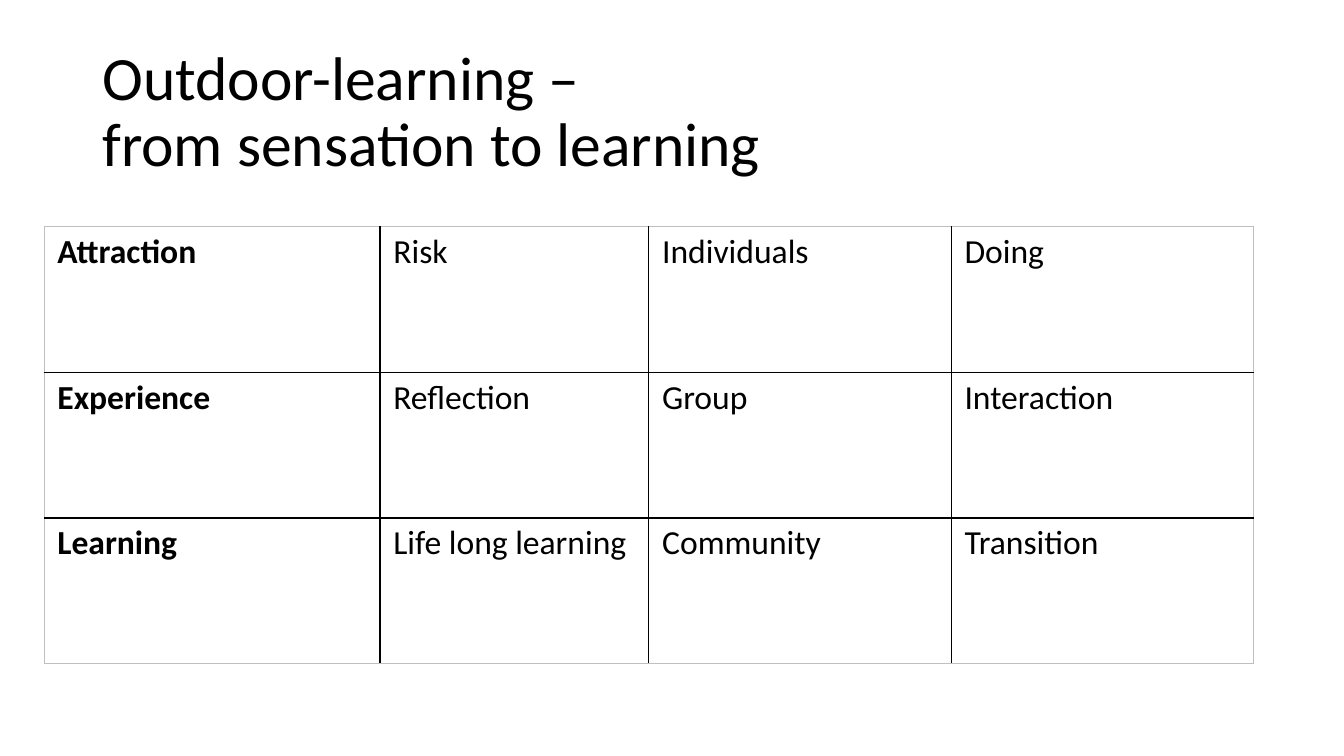
"""Build the outdoor-learning slide with its table of learning stages."""
from dataclasses import dataclass

from lxml import etree
from pptx import Presentation
from pptx.dml.color import RGBColor
from pptx.enum.text import MSO_ANCHOR
from pptx.oxml.ns import qn
from pptx.util import Emu, Pt

EMU_PER_PX = 6350
SLIDE_WIDTH, SLIDE_HEIGHT = 1920, 1080
FONT = "Calibri"
BLACK = RGBColor(0x00, 0x00, 0x00)
GREY = RGBColor(0xBF, 0xBF, 0xBF)
MIDDLE = MSO_ANCHOR.MIDDLE
TOP = MSO_ANCHOR.TOP
INNER_WIDTH, OUTER_WIDTH = Pt(1), Pt(0.5)
TITLE_LINES = ("Outdoor-learning – ", "from sensation to learning")
COLUMN_WIDTHS = (480, 384, 432, 432)
ROW_HEIGHT = 208


@dataclass(frozen=True)
class Box:
    left: int
    top: int
    width: int
    height: int

    def emu(self):
        return tuple(px(n) for n in (self.left, self.top, self.width, self.height))


@dataclass(frozen=True)
class Stage:
    name: str
    aspects: tuple[str, ...]


STAGES = (
    Stage("Attraction", ("Risk", "Individuals", "Doing")),
    Stage("Experience", ("Reflection", "Group", "Interaction")),
    Stage("Learning", ("Life long learning", "Community", "Transition")),
)
TITLE_BOX = Box(132, 58, 1656, 209)
TABLE_BOX = Box(63, 324, sum(COLUMN_WIDTHS), ROW_HEIGHT * len(STAGES))


def px(length: int) -> Emu:
    return Emu(length * EMU_PER_PX)


def add_run(paragraph, text: str, size: int, bold: bool = False) -> None:
    run = paragraph.add_run()
    run.text = text
    run.font.name = FONT
    run.font.size = Pt(size)
    run.font.bold = bold
    run.font.color.rgb = BLACK


def add_title(slide) -> None:
    frame = slide.shapes.add_textbox(*TITLE_BOX.emu()).text_frame
    frame.word_wrap = True
    frame.vertical_anchor = MIDDLE
    paragraph = frame.paragraphs[0]
    paragraph.line_spacing = 0.9
    for index, line in enumerate(TITLE_LINES):
        if index:
            paragraph.add_line_break()
        add_run(paragraph, line, 44)


def set_borders(cell, outer_sides: dict[str, bool]) -> None:
    properties = cell._tc.get_or_add_tcPr()
    for position, (side, is_outer) in enumerate(outer_sides.items()):
        width, color = (OUTER_WIDTH, GREY) if is_outer else (INNER_WIDTH, BLACK)
        border = etree.Element(qn(f"a:{side}"), w=str(int(width)))
        fill = etree.SubElement(border, qn("a:solidFill"))
        etree.SubElement(fill, qn("a:srgbClr"), val=str(color))
        properties.insert(position, border)


def fill_cell(cell, text: str, bold: bool) -> None:
    cell.margin_left = cell.margin_right = px(19)
    cell.margin_top = cell.margin_bottom = px(7)
    cell.vertical_anchor = TOP
    cell.fill.background()
    add_run(cell.text_frame.paragraphs[0], text, 24, bold)


def add_stage_table(slide) -> None:
    last_row, last_column = len(STAGES) - 1, len(COLUMN_WIDTHS) - 1
    table = slide.shapes.add_table(
        len(STAGES), len(COLUMN_WIDTHS), *TABLE_BOX.emu()
    ).table
    table.first_row = False
    table.horz_banding = False
    for column, width in zip(table.columns, COLUMN_WIDTHS):
        column.width = px(width)
    for row, stage in enumerate(STAGES):
        table.rows[row].height = px(ROW_HEIGHT)
        for column, text in enumerate((stage.name, *stage.aspects)):
            cell = table.cell(row, column)
            fill_cell(cell, text, bold=column == 0)
            set_borders(cell, {
                "lnL": column == 0,
                "lnR": column == last_column,
                "lnT": row == 0,
                "lnB": row == last_row,
            })


def main() -> None:
    presentation = Presentation()
    presentation.slide_width = px(SLIDE_WIDTH)
    presentation.slide_height = px(SLIDE_HEIGHT)
    slide = presentation.slides.add_slide(presentation.slide_layouts[6])
    add_title(slide)
    add_stage_table(slide)
    presentation.save("out.pptx")


if __name__ == "__main__":
    main()
